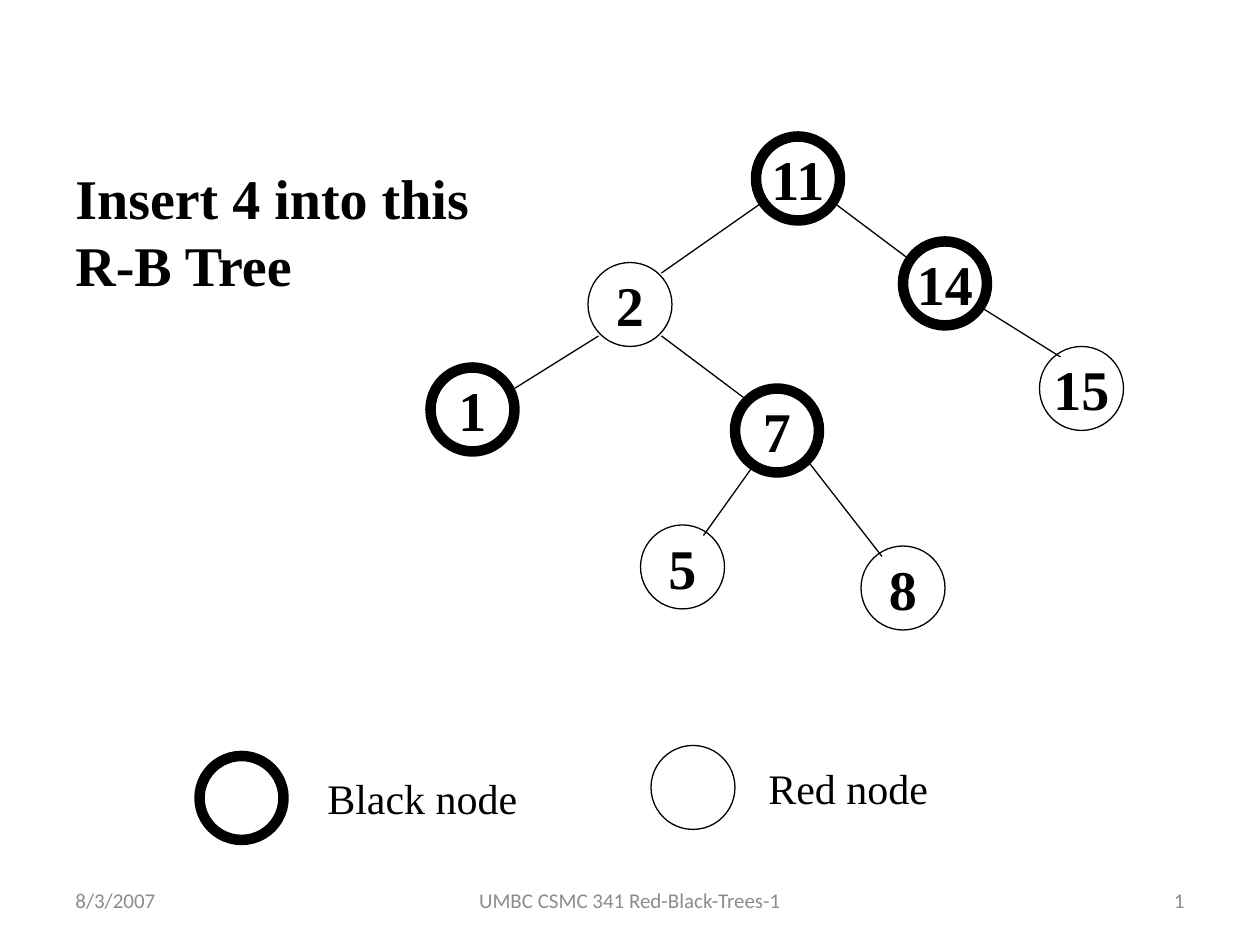
from typing import Any, NamedTuple

from lxml.etree import SubElement
from pptx import Presentation
from pptx.dml.color import RGBColor
from pptx.enum.shapes import MSO_CONNECTOR, MSO_SHAPE
from pptx.enum.text import MSO_ANCHOR, PP_ALIGN
from pptx.oxml.ns import qn
from pptx.util import Pt

SCALE = 9525
SIZE = 64
COLORS = {"ink": "000000", "paper": "FFFFFF", "gray": "8C8C8C"}
STYLES: dict[str, dict[str, Any]] = {
    "node": {"name": "Times New Roman", "size": Pt(32), "bold": True},
    "key": {"name": "Times New Roman", "size": Pt(24), "bold": False},
    "foot": {"name": "Calibri", "size": Pt(12), "bold": False},
}


class Node(NamedTuple):
    label: str
    x: int
    y: int
    black: bool


class Edge(NamedTuple):
    x1: int
    y1: int
    x2: int
    y2: int


class Label(NamedTuple):
    text: str
    x: int
    y: int
    w: int
    h: int
    style: str
    color: str = "ink"
    align: PP_ALIGN = PP_ALIGN.LEFT
    anchor: MSO_ANCHOR = MSO_ANCHOR.TOP


NODES = [
    Node("11", 576, 104, True),
    Node("14", 688, 184, True),
    Node("15", 792, 264, False),
    Node("2", 448, 200, False),
    Node("1", 328, 280, True),
    Node("7", 560, 296, True),
    Node("5", 488, 400, False),
    Node("8", 656, 416, False),
]
EDGES = [
    Edge(584, 152, 504, 208),
    Edge(456, 256, 392, 296),
    Edge(504, 256, 568, 304),
    Edge(576, 352, 536, 408),
    Edge(616, 352, 672, 424),
    Edge(632, 152, 696, 200),
    Edge(744, 232, 808, 272),
]
KEYS = [Node("", 152, 576, True), Node("", 496, 568, False)]
FOOT = (667, 38)
LABELS = [
    Label("8/3/2007", 48, FOOT[0], 224, FOOT[1], "foot", "gray",
          PP_ALIGN.LEFT, MSO_ANCHOR.MIDDLE),
    Label("UMBC CSMC 341 Red-Black-Trees-1", 328, FOOT[0], 304, FOOT[1], "foot", "gray",
          PP_ALIGN.CENTER, MSO_ANCHOR.MIDDLE),
    Label("1", 688, FOOT[0], 224, FOOT[1], "foot", "gray",
          PP_ALIGN.RIGHT, MSO_ANCHOR.MIDDLE),
    Label("Black node", 240, 584, 192, 48, "key"),
    Label("Red node", 576, 576, 184, 48, "key"),
    Label("Insert 4 into this R-B Tree", 48, 120, 328, 112, "node"),
]


def px(*vals: int) -> list[int]:
    return [val * SCALE for val in vals]


def paint(name: str) -> RGBColor:
    return RGBColor.from_string(COLORS[name])


def apply(item: Any, props: dict[str, Any]) -> None:
    for key, val in props.items():
        setattr(item, key, val)


def write(frame: Any, text: str, style: str, color: str, align: PP_ALIGN) -> None:
    par = frame.paragraphs[0]
    par.alignment = align
    run = par.add_run()
    run.text = text
    apply(run.font, STYLES[style])
    run.font.color.rgb = paint(color)


def stroke(line: Any, width: float) -> None:
    line.color.rgb = paint("ink")
    line.width = Pt(width)


def draw_node(shapes: Any, node: Node) -> None:
    disc = shapes.add_shape(MSO_SHAPE.OVAL, *px(node.x, node.y, SIZE, SIZE))
    disc.shadow.inherit = False
    disc.fill.solid()
    disc.fill.fore_color.rgb = paint("paper")
    stroke(disc.line, 6 if node.black else 0.75)
    if node.label:
        apply(disc.text_frame, {"word_wrap": False, "vertical_anchor": MSO_ANCHOR.MIDDLE})
        write(disc.text_frame, node.label, "node", "ink", PP_ALIGN.CENTER)


def draw_edge(shapes: Any, edge: Edge) -> None:
    link = shapes.add_connector(MSO_CONNECTOR.STRAIGHT, *px(*edge))
    stroke(link.line, 0.75)
    SubElement(link._element.spPr, qn("a:effectLst"))


def draw_label(shapes: Any, label: Label) -> None:
    frame = shapes.add_textbox(*px(label.x, label.y, label.w, label.h)).text_frame
    apply(frame, {"word_wrap": True, "vertical_anchor": label.anchor})
    write(frame, label.text, label.style, label.color, label.align)


def main() -> None:
    """Build the red-black tree slide."""
    deck = Presentation()
    deck.slide_width, deck.slide_height = px(960, 720)
    shapes = deck.slides.add_slide(deck.slide_layouts[6]).shapes
    for node in NODES:
        draw_node(shapes, node)
    for edge in EDGES:
        draw_edge(shapes, edge)
    for key in KEYS:
        draw_node(shapes, key)
    for label in LABELS:
        draw_label(shapes, label)
    deck.save("out.pptx")


if __name__ == "__main__":
    main()
